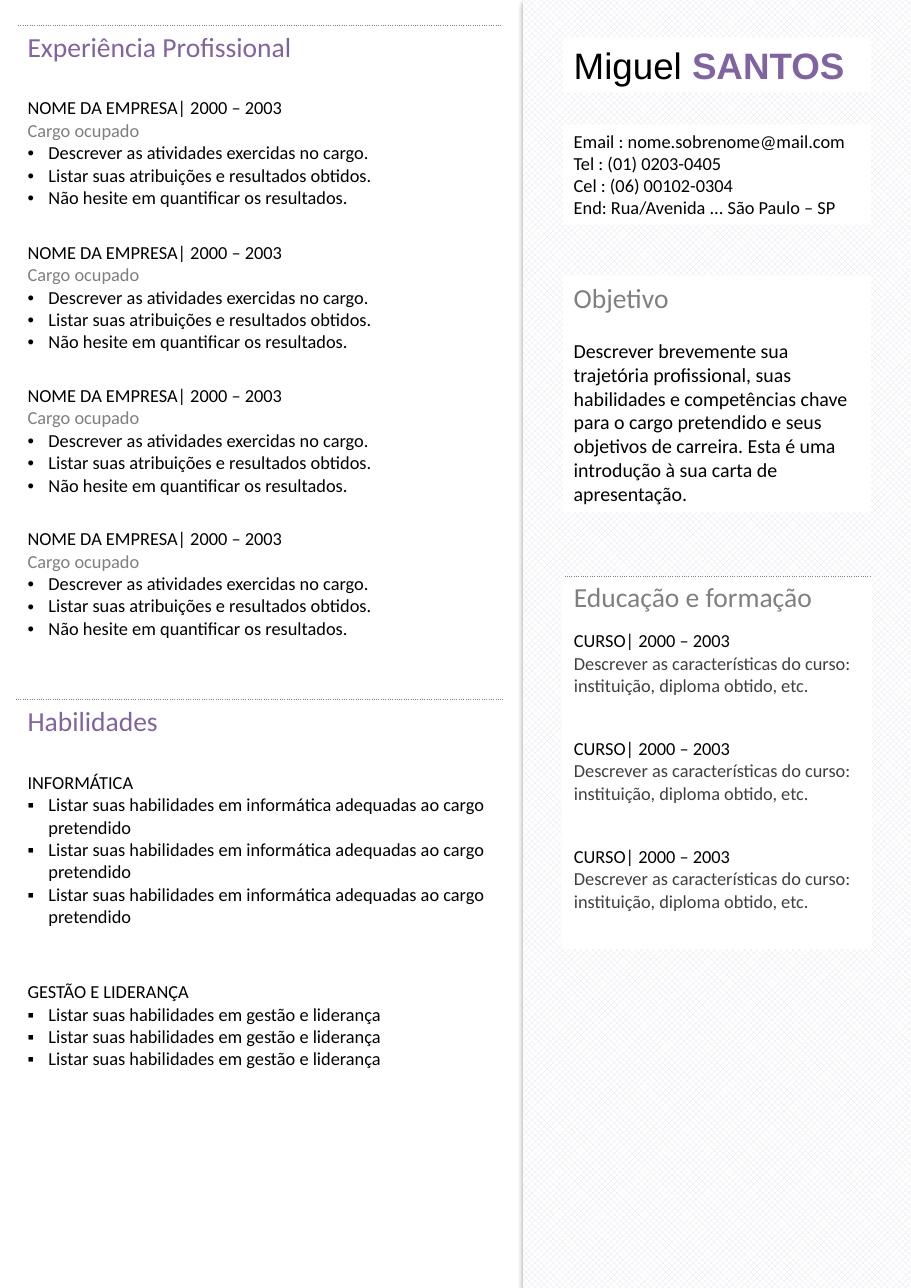
from dataclasses import dataclass
from typing import Optional

from lxml.etree import SubElement
from pptx import Presentation
from pptx.dml.color import RGBColor
from pptx.enum.dml import MSO_PATTERN
from pptx.enum.shapes import MSO_SHAPE
from pptx.enum.text import MSO_ANCHOR, PP_ALIGN
from pptx.oxml import parse_xml
from pptx.oxml.ns import nsdecls, qn
from pptx.util import Inches, Pt


@dataclass(frozen=True)
class Theme:
    black: str = "000000"
    white: str = "FFFFFF"
    purple: str = "8064A2"
    lilac: str = "E6E0EC"
    gray: str = "808080"
    role_gray: str = "7F7F7F"
    dark_gray: str = "404040"
    name_font: str = "Arial"
    body_font: str = "Calibri"
    name_size: float = 24
    heading_size: float = 18
    objective_size: float = 13
    body_size: float = 12


THEME = Theme()


@dataclass(frozen=True)
class Line:
    text: str
    color: str = THEME.black
    size: float = THEME.body_size
    bullet: Optional[str] = None
    space_before: float = 0


@dataclass(frozen=True)
class Row:
    height: float
    lines: tuple[Line, ...] = ()
    top_margin: float = 0.05
    rule_above: bool = False
    rule_below: bool = False


def add_text(paragraph, text: str, *, size: float = THEME.body_size, color: str = THEME.black,
             font: str = THEME.body_font, bold: bool = False) -> None:
    run = paragraph.add_run()
    run.text = text
    run.font.size = Pt(size)
    run.font.name = font
    run.font.bold = bold
    run.font.color.rgb = RGBColor.from_string(color)


def add_bullet(paragraph, character: str) -> None:
    properties = paragraph._p.get_or_add_pPr()
    properties.set("marL", str(Inches(0.19)))
    properties.set("indent", str(Inches(-0.19)))
    SubElement(properties, qn("a:buFont"), typeface="Arial")
    SubElement(properties, qn("a:buChar"), char=character)


def write_lines(text_frame, lines: tuple[Line, ...]) -> None:
    text_frame.word_wrap = True
    for index, line in enumerate(lines):
        paragraph = text_frame.add_paragraph() if index else text_frame.paragraphs[0]
        paragraph.alignment = PP_ALIGN.LEFT
        if line.bullet:
            add_bullet(paragraph, line.bullet)
        if line.space_before:
            paragraph.space_before = Pt(line.space_before)
        add_text(paragraph, line.text, size=line.size, color=line.color)


def add_panel(slide, left: float, top: float, width: float, height: float):
    shape = slide.shapes.add_shape(MSO_SHAPE.RECTANGLE, Inches(left), Inches(top),
                                   Inches(width), Inches(height))
    shape.shadow.inherit = False
    shape.line.fill.background()
    shape.fill.solid()
    shape.fill.fore_color.rgb = RGBColor.from_string(THEME.white)
    shape.text_frame.vertical_anchor = MSO_ANCHOR.TOP
    return shape


def add_sidebar(slide) -> None:
    shape = add_panel(slide, 4.75, 0, 3.52, 11.69)
    shape.fill.patterned()
    shape.fill.pattern = MSO_PATTERN.LARGE_CHECKER_BOARD
    shape.fill.fore_color.rgb = RGBColor.from_string(THEME.lilac)
    shape.fill.back_color.rgb = RGBColor.from_string(THEME.white)
    effects = shape._element.spPr.find(qn("a:effectLst"))
    effects.append(parse_xml(
        f'<a:outerShdw {nsdecls("a")} blurRad="{Pt(3.1)}" dist="{Pt(1.8)}" dir="5400000" '
        f'rotWithShape="0"><a:srgbClr val="{THEME.black}"><a:alpha val="35000"/>'
        '</a:srgbClr></a:outerShdw>'))


def add_rule(cell, side: str) -> None:
    cell._tc.get_or_add_tcPr().insert(0, parse_xml(
        f'<a:{side} {nsdecls("a")} w="{Pt(1)}"><a:solidFill><a:srgbClr val="{THEME.gray}"/>'
        f'</a:solidFill><a:prstDash val="sysDot"/></a:{side}>'))


def add_section_table(slide, left: float, top: float, width: float, rows: list[Row],
                      fill: Optional[str] = None) -> None:
    height = sum(row.height for row in rows)
    table = slide.shapes.add_table(len(rows), 1, Inches(left), Inches(top),
                                   Inches(width), Inches(height)).table
    table.first_row = False
    table.horz_banding = False
    for index, row in enumerate(rows):
        table.rows[index].height = Inches(row.height)
        cell = table.cell(index, 0)
        if fill:
            cell.fill.solid()
            cell.fill.fore_color.rgb = RGBColor.from_string(fill)
        else:
            cell.fill.background()
        cell.margin_top = Inches(row.top_margin)
        if not row.lines:
            cell.margin_top = cell.margin_bottom = 0
        write_lines(cell.text_frame, row.lines)
        if row.rule_above:
            add_rule(cell, "lnT")
        if row.rule_below:
            add_rule(cell, "lnB")


def heading(text: str, color: str, height: float = 0.4) -> Row:
    return Row(height, (Line(text, color, THEME.heading_size),), rule_above=True)


def skill_lines(title: str, skill: str) -> tuple[Line, ...]:
    return (Line(title), *[Line(skill, bullet="▪")] * 3)


def main() -> None:
    presentation = Presentation()
    presentation.slide_width = Inches(8.27)
    presentation.slide_height = Inches(11.69)
    slide = presentation.slides.add_slide(presentation.slide_layouts[6])
    panel_left, panel_width = 5.11, 2.8

    add_sidebar(slide)

    name_panel = add_panel(slide, panel_left, 0.34, panel_width, 0.5)
    name_panel.text_frame.word_wrap = True
    name = name_panel.text_frame.paragraphs[0]
    name.alignment = PP_ALIGN.LEFT
    add_text(name, "Miguel ", size=THEME.name_size, font=THEME.name_font)
    add_text(name, "SANTOS", size=THEME.name_size, font=THEME.name_font,
             color=THEME.purple, bold=True)

    contact_panel = add_panel(slide, panel_left, 1.13, panel_width, 0.91)
    write_lines(contact_panel.text_frame, (
        Line("Email : nome.sobrenome@mail.com"),
        Line("Tel : (01) 0203-0405"),
        Line("Cel : (06) 00102-0304"),
        Line("End: Rua/Avenida ... São Paulo – SP"),
    ))

    objective_panel = add_panel(slide, panel_left, 2.5, panel_width, 2.15)
    write_lines(objective_panel.text_frame, (
        Line("Objetivo", THEME.gray, THEME.heading_size),
        Line("Descrever brevemente sua trajetória profissional, suas habilidades e "
             "competências chave para o cargo pretendido e seus objetivos de carreira. "
             "Esta é uma introdução à sua carta de apresentação.",
             size=THEME.objective_size, space_before=16),
    ))

    job = (
        Line("NOME DA EMPRESA| 2000 – 2003"),
        Line("Cargo ocupado", THEME.role_gray),
        Line("Descrever as atividades exercidas no cargo.", bullet="•"),
        Line("Listar suas atribuições e resultados obtidos.", bullet="•"),
        Line("Não hesite em quantificar os resultados.", bullet="•"),
    )
    computing = skill_lines(
        "INFORMÁTICA", "Listar suas habilidades em informática adequadas ao cargo pretendido")
    leadership = skill_lines(
        "GESTÃO E LIDERANÇA", "Listar suas habilidades em gestão e liderança")
    add_section_table(slide, 0.15, 0.23, 4.41, [
        heading("Experiência Profissional", THEME.purple),
        Row(1.51, job, top_margin=0.25),
        *[Row(1.3, job)] * 3,
        Row(0.3, rule_below=True),
        heading("Habilidades", THEME.purple),
        Row(2.1, computing, top_margin=0.25),
        Row(0.91, leadership),
        Row(0.32),
    ])

    course = (
        Line("CURSO| 2000 – 2003"),
        Line("Descrever as características do curso: instituição, diploma obtido, etc.",
             THEME.dark_gray),
    )
    add_section_table(slide, panel_left, 5.23, panel_width, [
        heading("Educação e formação", THEME.gray, height=0.44),
        *[Row(0.98, course)] * 3,
    ], fill=THEME.white)

    presentation.save("out.pptx")


if __name__ == "__main__":
    main()
